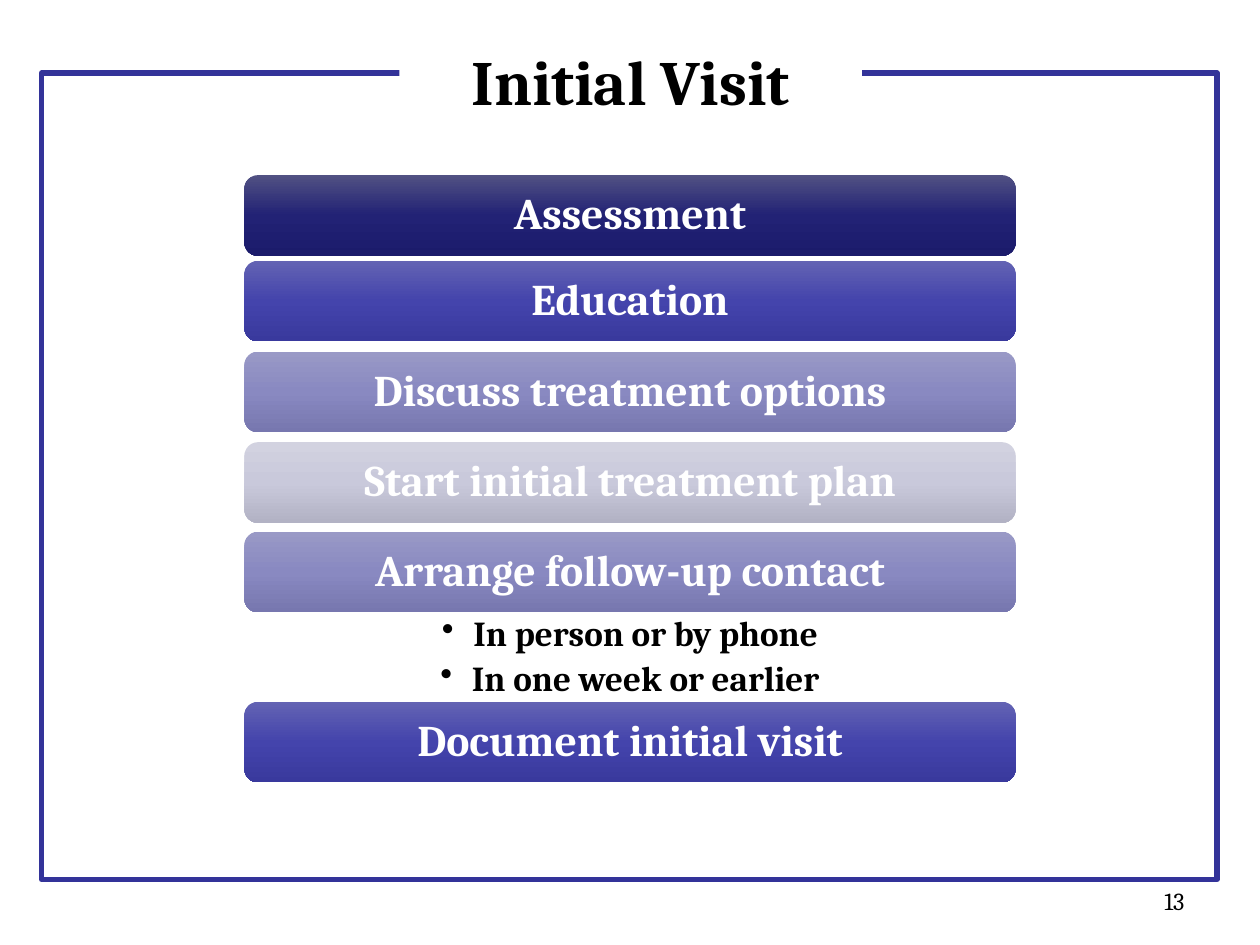
from copy import deepcopy

from pptx import Presentation
from pptx import util as u
from pptx.dml.color import RGBColor
from pptx.enum import shapes, text
from pptx.oxml import parse_xml
from pptx.oxml.ns import nsdecls, qn

FONT = "Cambria"
NAVY = ("515183", "222275", "1B1B6B")
INDIGO = ("6363B3", "4444AC", "39399D")
LAVENDER = ("9999C6", "8989C1", "7777AF")
GREY = ("D2D2E0", "C9C9DB", "B2B2C4")
BAR_HEIGHT = 0.64
BULLETS_HEIGHT = 0.71
STEPS = [
    ("Assessment", NAVY, 0),
    ("Education", INDIGO, 0.04),
    ("Discuss treatment options", LAVENDER, 0.08),
    ("Start initial treatment plan", GREY, 0.08),
    ("Arrange follow-up contact", LAVENDER, 0.07),
    ("Document initial visit", INDIGO, BULLETS_HEIGHT),
]
FOLLOW_UP = ["In person or by phone", "In one week or earlier"]


def color(value):
    """Turn a hex string into a colour."""
    return RGBColor.from_string(value)


def inches(*lengths):
    """Turn numbers into lengths in inches."""
    return [u.Inches(length) for length in lengths]


def add_run(paragraph, wording, size, fill="000000", bold=True,
            align=text.PP_ALIGN.CENTER):
    """Add one formatted run and align its paragraph."""
    paragraph.alignment = align
    run = paragraph.add_run()
    run.text = wording
    run.font.name = FONT
    run.font.size = u.Pt(size)
    run.font.bold = bold
    run.font.color.rgb = color(fill)


def set_margins(frame, horizontal, vertical):
    """Set the insets of a text frame and let it wrap."""
    frame.word_wrap = True
    frame.margin_left = frame.margin_right = u.Inches(horizontal)
    frame.margin_top = frame.margin_bottom = u.Inches(vertical)


def fill_gradient(shape, colors):
    """Fill a shape with evenly spaced colours from top to bottom."""
    shape.fill.gradient()
    shape.fill.gradient_angle = 270
    stop_list = shape.element.spPr.find(".//" + qn("a:gsLst"))
    stop_list.insert(1, deepcopy(stop_list[0]))
    for index, (stop, value) in enumerate(zip(shape.fill.gradient_stops, colors)):
        stop.color.rgb = color(value)
        stop.position = index / (len(colors) - 1)


def add_frame(slide, left, top, width, height):
    """Draw the border around the slide content."""
    frame = slide.shapes.add_shape(
        shapes.MSO_SHAPE.RECTANGLE, *inches(left, top, width, height))
    frame.shadow.inherit = False
    frame.fill.background()
    frame.line.color.rgb = color("333399")
    frame.line.width = u.Pt(3)


def add_title(slide, wording, left, top, width, height):
    """Place the title over the gap in the border."""
    title = slide.shapes.title
    title.left, title.top, title.width, title.height = inches(left, top, width, height)
    title.fill.solid()
    title.fill.fore_color.rgb = color("FFFFFF")
    frame = title.text_frame
    frame.vertical_anchor = text.MSO_ANCHOR.MIDDLE
    frame.auto_size = text.MSO_AUTO_SIZE.NONE
    set_margins(frame, 0.1, 0.05)
    add_run(frame.paragraphs[0], wording, 36)
    title.element.getparent().append(title.element)


def add_bar(slide, wording, colors, left, top, width, height):
    """Draw one step as a rounded bar."""
    bar = slide.shapes.add_shape(
        shapes.MSO_SHAPE.ROUNDED_RECTANGLE, *inches(left, top, width, height))
    bar.shadow.inherit = False
    bar.line.fill.background()
    fill_gradient(bar, colors)
    frame = bar.text_frame
    frame.vertical_anchor = text.MSO_ANCHOR.MIDDLE
    set_margins(frame, 0.1, 0.1)
    paragraph = frame.paragraphs[0]
    paragraph.line_spacing = 0.9
    add_run(paragraph, wording, 25, "FFFFFF")


def add_bullets(slide, items, left, top, width, height):
    """Add the centred bullet list."""
    box = slide.shapes.add_textbox(*inches(left, top, width, height))
    frame = box.text_frame
    set_margins(frame, 0.19, 0.03)
    for index, item in enumerate(items):
        paragraph = frame.add_paragraph() if index else frame.paragraphs[0]
        paragraph.level = 1
        paragraph.line_spacing = 0.9
        paragraph.space_after = u.Pt(4)
        add_run(paragraph, item, 20)
        properties = paragraph._p.get_or_add_pPr()
        properties.set("marL", str(u.Inches(0.25)))
        properties.set("indent", str(u.Inches(-0.25)))
        properties.append(parse_xml(f'<a:buChar {nsdecls("a")} char="•"/>'))


def add_steps(slide, left, top, width):
    """Stack the bars, with the bullets above the last one."""
    for wording, colors, gap in STEPS:
        if gap == BULLETS_HEIGHT:
            add_bullets(slide, FOLLOW_UP, left, top, width, gap)
        top += gap
        add_bar(slide, wording, colors, left, top, width, BAR_HEIGHT)
        top += BAR_HEIGHT


def add_page_number(slide, number, left, top, width, height):
    """Add the page number at the lower right."""
    box = slide.shapes.add_textbox(*inches(left, top, width, height))
    set_margins(box.text_frame, 0.1, 0.05)
    add_run(box.text_frame.paragraphs[0], number, 14, bold=False,
            align=text.PP_ALIGN.RIGHT)


def main():
    """Build and save the presentation."""
    presentation = Presentation()
    presentation.slide_width, presentation.slide_height = inches(10, 7.5)
    slide = presentation.slides.add_slide(presentation.slide_layouts[5])
    add_page_number(slide, "13", 7.17, 6.98, 2.33, 0.52)
    add_steps(slide, 1.94, 1.39, 6.12)
    add_frame(slide, 0.33, 0.58, 9.33, 6.4)
    add_title(slide, "Initial Visit", 3.17, 0.33, 3.67, 0.62)
    presentation.save("out.pptx")


if __name__ == "__main__":
    main()
